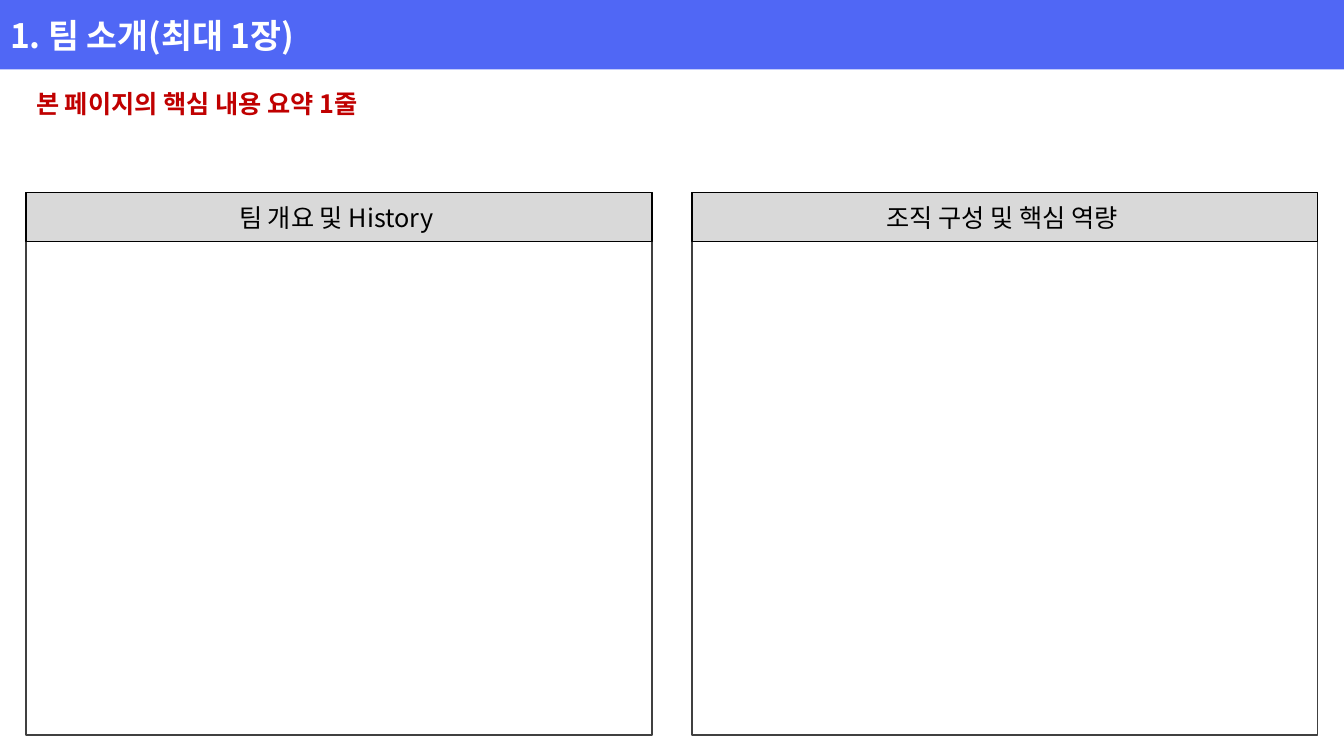
from dataclasses import dataclass

from lxml.etree import SubElement
from pptx import Presentation
from pptx.dml.color import RGBColor
from pptx.enum.shapes import MSO_SHAPE as Kind
from pptx.enum.text import MSO_ANCHOR as Anchor, MSO_AUTO_SIZE as Fit, PP_ALIGN as Align
from pptx.oxml.ns import qn
from pptx.shapes.autoshape import Shape
from pptx.slide import Slide
from pptx.util import Cm, Pt

FONT = "Noto Sans CJK KR"
WIDTH, HEIGHT = 33.87, 19.05
MARGIN = 0.66
BAR = 1.75
PANEL = 15.77
TOP, BODY, HEAD = 4.85, 13.67, 1.24


@dataclass
class Box:
    left: float
    top: float
    width: float
    height: float

    def cm(self) -> tuple[Cm, Cm, Cm, Cm]:
        return Cm(self.left), Cm(self.top), Cm(self.width), Cm(self.height)


@dataclass
class Style:
    size: int
    color: str
    bold: bool = False
    align: Align = Align.LEFT
    lines: float = 1.0


def rgb(code: str) -> RGBColor:
    return RGBColor.from_string(code)


def write(shape: Shape, text: str, style: Style) -> None:
    frame = shape.text_frame
    frame.word_wrap = True
    frame.auto_size = Fit.NONE
    frame.vertical_anchor = Anchor.MIDDLE
    frame.text = text
    para = frame.paragraphs[0]
    para.alignment = style.align
    para.line_spacing = style.lines
    font = para.font
    font.name = FONT
    font.size = Pt(style.size)
    font.bold = style.bold
    font.color.rgb = rgb(style.color)
    # Hangul takes its typeface from the East Asian slot
    SubElement(para._p.pPr.find(qn("a:defRPr")), qn("a:ea"), typeface=FONT)


def add_rect(slide: Slide, box: Box, line: str, fill: str = "") -> Shape:
    """Add an outlined rectangle, hollow when no fill is given."""
    shape = slide.shapes.add_shape(Kind.RECTANGLE, *box.cm())
    shape.shadow.inherit = False
    shape.line.color.rgb = rgb(line)
    shape.line.width = Pt(1)
    if fill:
        shape.fill.solid()
        shape.fill.fore_color.rgb = rgb(fill)
    else:
        shape.fill.background()
    return shape


def add_title(slide: Slide, text: str) -> None:
    title = slide.shapes.title
    title.left, title.top, title.width, title.height = Box(0, 0, WIDTH, BAR).cm()
    title.fill.solid()
    title.fill.fore_color.rgb = rgb("5067F5")
    write(title, text, Style(24, "FFFFFF", bold=True))


def add_panel(slide: Slide, left: float, text: str) -> None:
    add_rect(slide, Box(left, TOP, PANEL, BODY), "404040")
    head = add_rect(slide, Box(left, TOP, PANEL, HEAD), "000000", "D9D9D9")
    write(head, text, Style(18, "000000", align=Align.CENTER))


def main() -> None:
    deck = Presentation()
    deck.slide_width, deck.slide_height = Cm(WIDTH), Cm(HEIGHT)
    slide = deck.slides.add_slide(deck.slide_layouts.get_by_name("Title Only"))

    add_title(slide, "1. 팀 소개(최대 1장)")
    lead = slide.shapes.add_textbox(*Box(MARGIN, BAR, WIDTH - 2 * MARGIN, 1.35).cm())
    write(lead, "본 페이지의 핵심 내용 요약 1줄", Style(18, "C00000", bold=True, lines=1.5))

    add_panel(slide, MARGIN, "팀 개요 및 History ")
    add_panel(slide, WIDTH - MARGIN - PANEL, "조직 구성 및 핵심 역량 ")
    deck.save("out.pptx")


if __name__ == "__main__":
    main()
